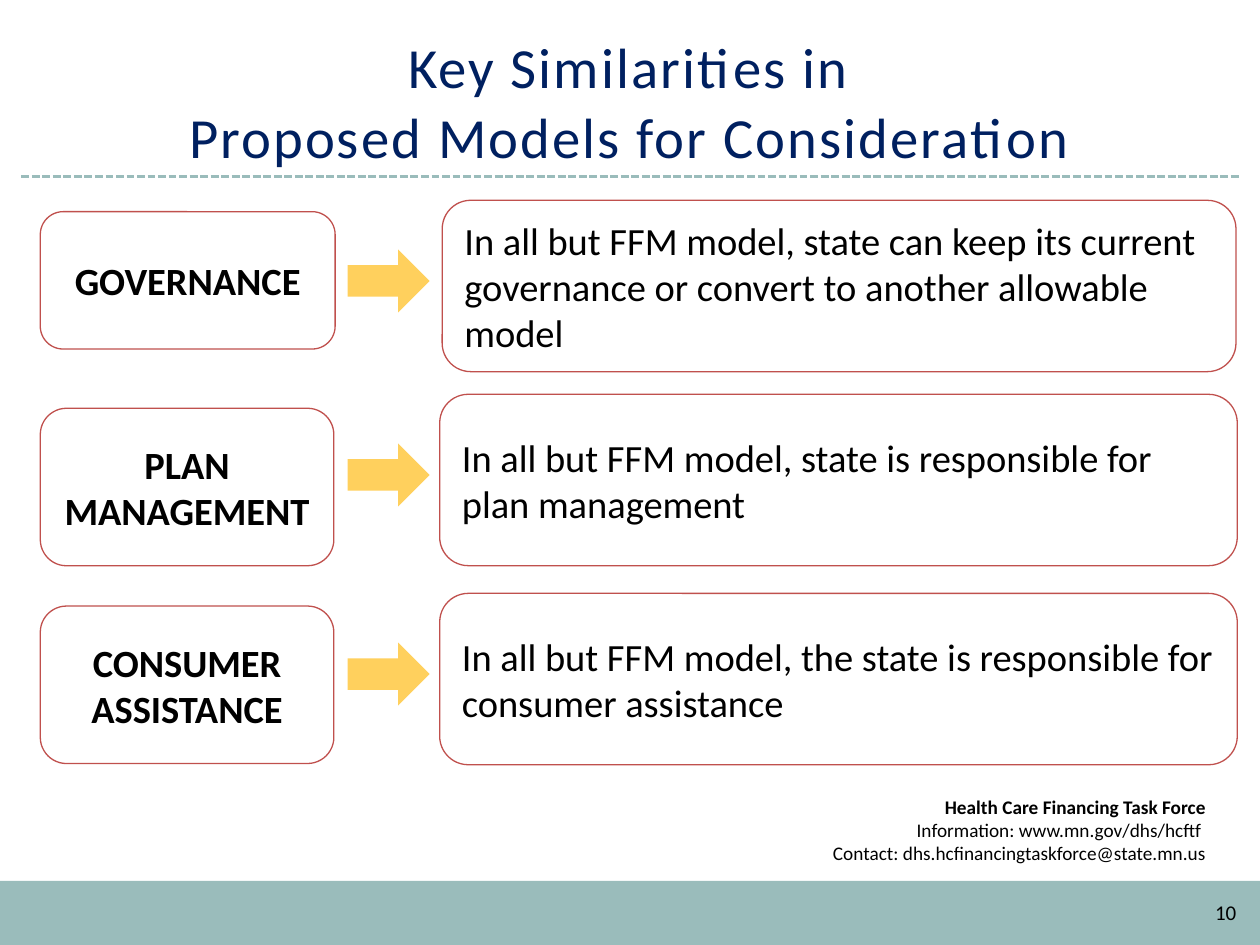
from lxml.etree import SubElement
from pptx import Presentation
from pptx.dml.color import RGBColor
from pptx.enum.dml import MSO_LINE_DASH_STYLE as Dash
from pptx.enum.shapes import MSO_CONNECTOR as Connector, MSO_SHAPE as Shape
from pptx.enum.text import MSO_ANCHOR as Anchor, PP_ALIGN as Align
from pptx.oxml.ns import qn
from pptx.util import Inches, Pt

BLACK = RGBColor(0x00, 0x00, 0x00)
WHITE = RGBColor(0xFF, 0xFF, 0xFF)
NAVY = RGBColor(0x00, 0x20, 0x60)
TEAL = RGBColor(0x9A, 0xBC, 0xBB)
RED = RGBColor(0xC0, 0x50, 0x4D)
GOLD = RGBColor(0xFF, 0xD0, 0x5D)

FONT = "Calibri"
BOX_OPACITY = 34  # percent
BOX_MARGINS = {"margin_left": Inches(0.11), "margin_right": Inches(0.11),
               "margin_top": Inches(0.06), "margin_bottom": Inches(0.06)}

TITLE = "Key Similarities in\vProposed Models for Consideration"
CONTACT_LINES = ["Health Care Financing Task Force",
                 "Information: www.mn.gov/dhs/hcftf ",
                 "Contact: dhs.hcfinancingtaskforce@state.mn.us"]

# Topic, finding, then (left, top, width, height) of each one's box
ROWS = [
    ("GOVERNANCE",
     "In all but FFM model, state can keep its current governance "
     "or convert to another allowable model",
     (0.32, 1.68, 2.34, 1.09), (3.51, 1.59, 6.3, 1.36)),
    ("PLAN MANAGEMENT",
     "In all but FFM model, state is responsible for plan management",
     (0.32, 3.24, 2.33, 1.25), (3.49, 3.13, 6.33, 1.36)),
    ("CONSUMER ASSISTANCE",
     "In all but FFM model, the state is responsible for consumer assistance",
     (0.32, 4.81, 2.33, 1.25), (3.49, 4.71, 6.33, 1.36)),
]
ARROW_LEFT, ARROW_WIDTH, ARROW_HEIGHT = 2.76, 0.65, 0.5
ARROW_DROP = 0.39  # from the top of the finding's box


def inches(box):
    return [Inches(length) for length in box]


def set_values(target, values):
    for name, value in values.items():
        setattr(target, name, value)


def format_paragraph(paragraph, size, color=BLACK, bold=False, align=Align.LEFT):
    paragraph.alignment = align
    for run in paragraph.runs:
        set_values(run.font, {"name": FONT, "size": Pt(size), "bold": bold})
        run.font.color.rgb = color


def add_plain_shape(shapes, preset, box, fill):
    """Add a shape with a solid fill and neither line nor shadow."""
    shape = shapes.add_shape(preset, *inches(box))
    shape.shadow.inherit = False
    shape.fill.solid()
    shape.fill.fore_color.rgb = fill
    shape.line.fill.background()
    return shape


def add_rounded_box(shapes, box, text, **text_format):
    shape = add_plain_shape(shapes, Shape.ROUNDED_RECTANGLE, box, WHITE)
    color = shape.fill._xPr.find(qn("a:solidFill"))[0]
    SubElement(color, qn("a:alpha"), val=str(BOX_OPACITY * 1000))
    shape.line.color.rgb = RED
    shape.line.width = Pt(0.75)
    frame = shape.text_frame
    set_values(frame, {"word_wrap": True, "vertical_anchor": Anchor.MIDDLE, **BOX_MARGINS})
    frame.text = text
    format_paragraph(frame.paragraphs[0], 22, **text_format)


def add_row(slide, topic, finding, topic_box, finding_box):
    shapes = slide.shapes.add_group_shape().shapes
    add_rounded_box(shapes, topic_box, topic, bold=True, align=Align.CENTER)
    arrow_box = (ARROW_LEFT, finding_box[1] + ARROW_DROP, ARROW_WIDTH, ARROW_HEIGHT)
    add_plain_shape(shapes, Shape.RIGHT_ARROW, arrow_box, GOLD)
    add_rounded_box(shapes, finding_box, finding)


def add_title(slide, box):
    title = slide.shapes.title
    set_values(title, dict(zip(("left", "top", "width", "height"), inches(box))))
    frame = title.text_frame
    set_values(frame, {"word_wrap": True, "vertical_anchor": Anchor.BOTTOM})
    frame.text = TITLE
    paragraph = frame.paragraphs[0]
    paragraph.line_spacing = Pt(40)
    format_paragraph(paragraph, 32.4, NAVY, align=Align.CENTER)
    for run in paragraph.runs:
        run.font._element.set("spc", "120")


def add_title_rule(slide, left, right, top):
    rule = slide.shapes.add_connector(Connector.STRAIGHT, *inches((left, top, right, top)))
    set_values(rule.line, {"width": Pt(1.5), "dash_style": Dash.SQUARE_DOT})
    rule.line.color.rgb = TEAL
    SubElement(rule._element.spPr, qn("a:effectLst"))


def add_contact(slide, box):
    frame = slide.shapes.add_textbox(*inches(box)).text_frame
    frame.word_wrap = True
    frame.text = "\n".join(CONTACT_LINES)
    for index, paragraph in enumerate(frame.paragraphs):
        format_paragraph(paragraph, 11, bold=index == 0, align=Align.RIGHT)


def add_page_number(slide, box, number):
    frame = slide.shapes.add_textbox(*inches(box)).text_frame
    set_values(frame, {"word_wrap": True, "vertical_anchor": Anchor.MIDDLE})
    frame.text = str(number)
    format_paragraph(frame.paragraphs[0], 12, align=Align.RIGHT)


def main():
    presentation = Presentation()
    set_values(presentation, {"slide_width": Inches(10), "slide_height": Inches(7.5)})
    slide = presentation.slides.add_slide(presentation.slide_layouts[5])
    add_plain_shape(slide.shapes, Shape.RECTANGLE, (0, 6.99, 10, 0.51), TEAL)
    add_title_rule(slide, 0.17, 9.83, 1.4)
    add_contact(slide, (4.54, 6.26, 5.13, 0.67))
    add_title(slide, (0.33, 0.25, 9.33, 1.15))
    for row in ROWS:
        add_row(slide, *row)
    add_page_number(slide, (9.33, 7.04, 0.58, 0.4), 10)
    presentation.save("out.pptx")


if __name__ == "__main__":
    main()
